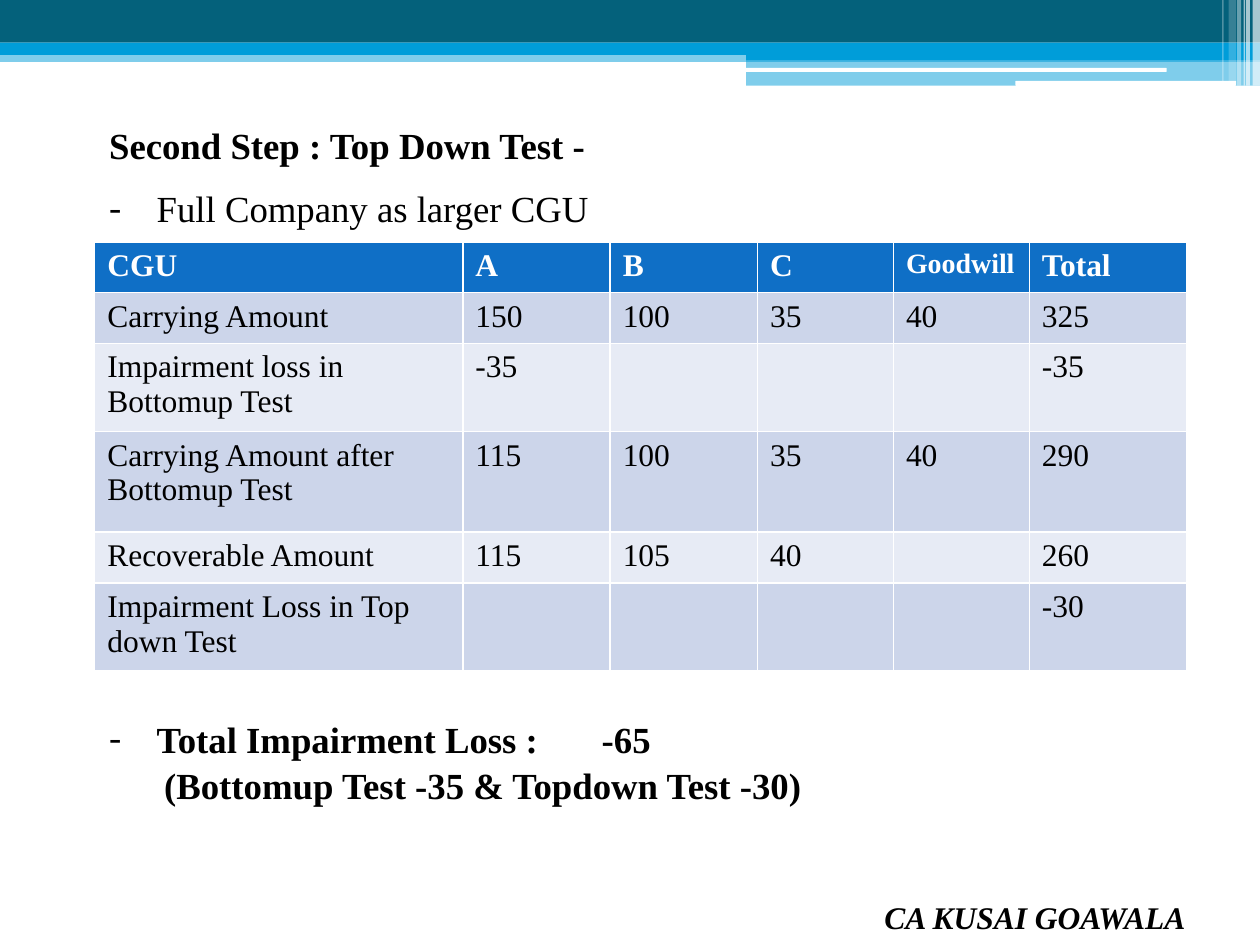
from dataclasses import dataclass

from lxml import etree
from pptx import Presentation
from pptx.dml.color import RGBColor
from pptx.enum.shapes import MSO_SHAPE as Kind
from pptx.oxml.ns import qn
from pptx.util import Cm, Pt

FONT = "Times New Roman"
BLACK = RGBColor(0x00, 0x00, 0x00)
WHITE = RGBColor(0xFF, 0xFF, 0xFF)
TEAL = RGBColor(0x04, 0x61, 0x7B)
SKY = RGBColor(0x00, 0x9D, 0xD9)
BLUE = RGBColor(0x0F, 0x6F, 0xC6)
DARK = RGBColor(0xCC, 0xD5, 0xEA)
LIGHT = RGBColor(0xE7, 0xEB, 0xF5)


@dataclass
class Bar:
    """A band of the header; lengths in cm, alpha in percent."""
    left: float
    top: float
    width: float
    height: float
    color: RGBColor
    alpha: int = 100
    kind: Kind = Kind.RECTANGLE


@dataclass
class Line:
    """A paragraph; indents and tab stop in cm, gap above in points."""
    text: str
    bold: bool = True
    left: float = 0.25
    hang: float = 0
    gap: float = 0
    space: float = 1
    tab: float = 0


BARS = [
    Bar(0, 1.02, 25.4, 0.23, SKY, 50),
    Bar(0, 0, 25.4, 0.86, TEAL),
    Bar(0, 0.86, 25.4, 0.25, SKY),
    Bar(15.04, 0.99, 10.36, 0.23, SKY),
    Bar(15.04, 1.22, 10.36, 0.51, SKY, 50),
    Bar(15.01, 1.37, 8.51, 0.08, WHITE, kind=Kind.ROUNDED_RECTANGLE),
    Bar(20.47, 1.63, 4.45, 0.1, WHITE, kind=Kind.ROUNDED_RECTANGLE),
    Bar(25.25, 0, 0.15, 1.73, WHITE, 65),
    Bar(25.12, 0, 0.08, 1.73, WHITE, 65),
    Bar(25.07, 0, 0.03, 1.73, WHITE, 60),
    Bar(24.94, 0, 0.08, 1.73, WHITE, 40),
    Bar(24.77, 0, 0.15, 1.63, WHITE, 20),
    Bar(24.64, 0, 0.03, 1.63, WHITE, 30),
]

LINES = [
    Line("Second Step : Top Down Test -", space=1.5),
    Line("Full Company as larger CGU", bold=False, left=1.21, hang=0.96,
         gap=10.8),
    Line("Total Impairment Loss :\t-65", left=1.21, hang=0.96, gap=278,
         tab=10.18),
    Line("(Bottomup Test -35 & Topdown Test -30)", left=1.36, gap=1),
]

COLS = [7.42, 2.97, 2.97, 2.74, 2.74, 3.18]
ROWS = [1.02, 1.02, 1.78, 2.03, 1.02, 1.78]
DATA = [
    ["CGU", "A", "B", "C", "Goodwill", "Total"],
    ["Carrying Amount", "150", "100", "35", "40", "325"],
    ["Impairment loss in Bottomup Test", "-35", "", "", "", "-35"],
    ["Carrying Amount after Bottomup Test", "115", "100", "35", "40", "290"],
    ["Recoverable Amount", "115", "105", "40", "", "260"],
    ["Impairment Loss in Top down Test", "", "", "", "", "-30"],
]


def set_font(font, size: float, color: RGBColor, bold: bool) -> None:
    font.name, font.size, font.bold = FONT, Pt(size), bold
    font.color.rgb = color


def add_bar(slide, bar: Bar) -> None:
    box = [Cm(n) for n in (bar.left, bar.top, bar.width, bar.height)]
    shape = slide.shapes.add_shape(bar.kind, *box)
    shape.shadow.inherit = False
    shape.line.fill.background()
    shape.fill.solid()
    shape.fill.fore_color.rgb = bar.color
    if bar.alpha < 100:
        tone = shape.fill._xPr.find(".//" + qn("a:srgbClr"))
        etree.SubElement(tone, qn("a:alpha"), val=str(bar.alpha * 1000))


def add_box(slide, left: float, top: float, width: float, height: float):
    box = slide.shapes.add_textbox(Cm(left), Cm(top), Cm(width), Cm(height))
    box.text_frame.word_wrap = True
    return box.text_frame


def set_line(para, line: Line) -> None:
    para.text = line.text
    para.line_spacing = line.space
    para.space_before = Pt(line.gap)
    set_font(para.font, 21, BLACK, line.bold)
    props = para._p.get_or_add_pPr()
    props.set("marL", str(Cm(line.left)))
    props.set("indent", str(-Cm(line.hang)))
    # Bullet and tab elements come before the default run properties.
    extra = []
    if line.hang:
        extra.append(etree.Element(qn("a:buFont"), typeface=FONT))
        extra.append(etree.Element(qn("a:buChar"), char="-"))
    if line.tab:
        tabs = etree.Element(qn("a:tabLst"))
        etree.SubElement(tabs, qn("a:tab"), pos=str(Cm(line.tab)), algn="l")
        extra.append(tabs)
    last = props.find(qn("a:defRPr"))
    for item in extra:
        last.addprevious(item)


def add_grid(slide) -> None:
    table = slide.shapes.add_table(
        len(ROWS), len(COLS), Cm(1.91), Cm(4.88),
        Cm(sum(COLS)), Cm(sum(ROWS))).table
    for col, width in zip(table.columns, COLS):
        col.width = Cm(width)
    for r, (row, height) in enumerate(zip(table.rows, ROWS)):
        row.height = Cm(height)
        head = r == 0
        for cell, text in zip(row.cells, DATA[r]):
            cell.fill.solid()
            cell.fill.fore_color.rgb = BLUE if head else DARK if r % 2 else LIGHT
            cell.text = text
            size = 16 if text == "Goodwill" else 18
            set_font(cell.text_frame.paragraphs[0].font, size,
                     WHITE if head else BLACK, head)


def main() -> None:
    deck = Presentation()
    deck.slide_width, deck.slide_height = Cm(25.4), Cm(19.05)
    slide = deck.slides.add_slide(deck.slide_layouts[6])
    for bar in BARS:
        add_bar(slide, bar)
    body = add_box(slide, 1.7, 1.91, 22.43, 14.5)
    for i, line in enumerate(LINES):
        set_line(body.add_paragraph() if i else body.paragraphs[0], line)
    add_grid(slide)
    name = add_box(slide, 17.58, 17.98, 7.82, 1.07).paragraphs[0]
    name.text = "CA KUSAI GOAWALA"
    set_font(name.font, 18, BLACK, True)
    name.font.italic = True
    deck.save("out.pptx")


if __name__ == "__main__":
    main()
